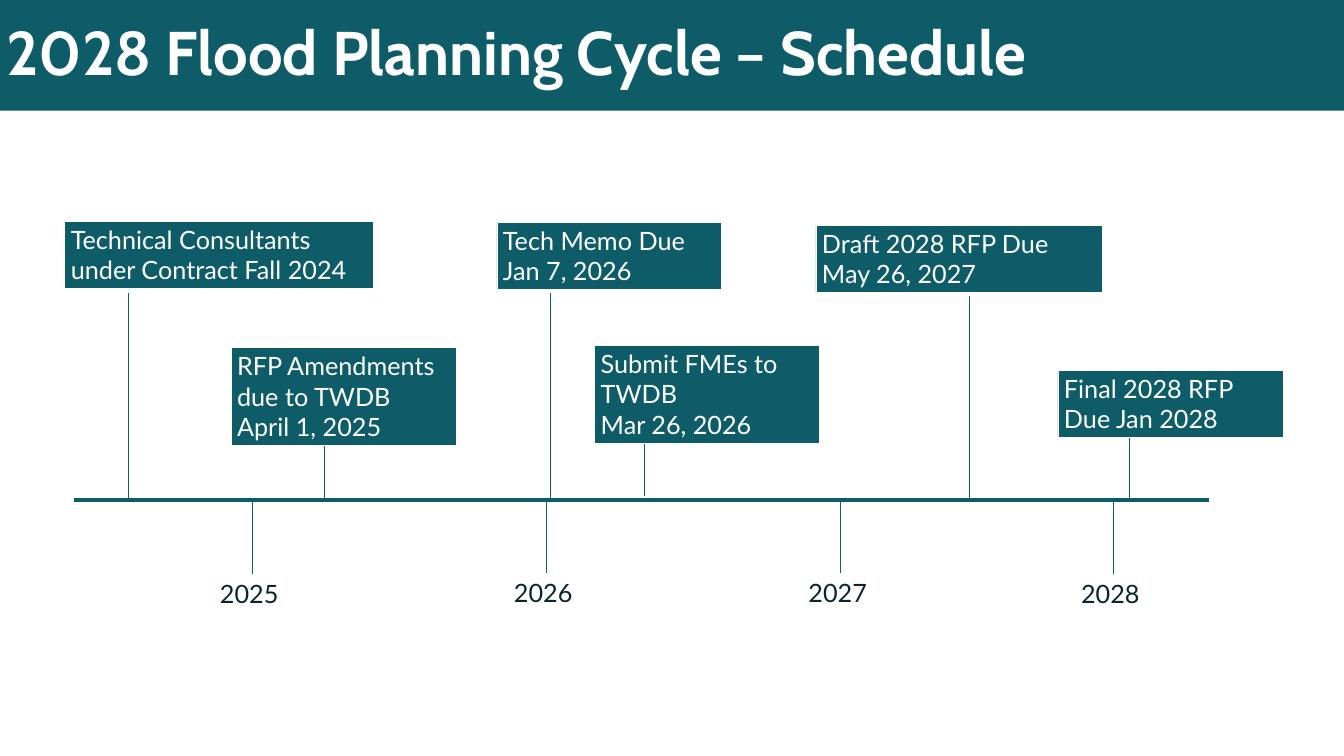
from lxml import etree
from pptx import Presentation
from pptx import util as u
from pptx.dml.color import RGBColor
from pptx.enum import shapes, text
from pptx.oxml import ns

TEAL = RGBColor(0x0E, 0x5C, 0x68)
INK = RGBColor(0x09, 0x26, 0x2C)
WHITE = RGBColor(0xFF, 0xFF, 0xFF)

SLIDE_WIDTH, SLIDE_HEIGHT = 21.99, 12.37
AXIS_Y = 8.18
TICK_LENGTH = 1.2

# Year, tick x, tick top
YEARS = [
    ("2025", 4.12, 8.2),
    ("2026", 8.93, AXIS_Y),
    ("2027", 13.75, AXIS_Y),
    ("2028", 18.21, 8.2),
]

# Paragraphs (a newline is a line break), box (left, top, width, height),
# stem (x, top, bottom)
MILESTONES = [
    (["Technical Consultants under Contract Fall 2024"],
     (1.06, 3.62, 5.05, 1.1), (2.1, 4.8, AXIS_Y)),
    (["RFP Amendments due to TWDB \nApril 1, 2025"],
     (3.78, 5.69, 3.68, 1.6), (5.3, 6.96, 8.16)),
    (["Draft 2028 RFP Due", "May 26, 2027"],
     (13.35, 3.69, 4.68, 1.1), (15.85, 4.85, 8.15)),
    (["Final 2028 RFP Due Jan 2028"],
     (17.31, 6.06, 3.68, 1.1), (18.48, 6.94, 8.15)),
    (["Tech Memo Due Jan 7, 2026"],
     (8.13, 3.64, 3.68, 1.1), (9.01, 4.8, 8.15)),
    (["Submit FMEs to TWDB", "Mar 26, 2026"],
     (9.73, 5.65, 3.68, 1.6), (10.54, 6.98, 8.11)),
]


class TimelineSlide:
    title_font, body_font = "Cabin", "Lato"
    title_size, body_size = 72.6, 29.7

    def __init__(self, presentation):
        self.slide = presentation.slides.add_slide(presentation.slide_layouts[5])

    def add_run(self, paragraph, words, font, size, color, bold=False):
        run = paragraph.add_run()
        run.text = words
        run.font.name = font
        run.font.size = u.Pt(size)
        run.font.bold = bold
        run.font.color.rgb = color

    def title(self, words, height):
        shape = self.slide.shapes.title
        shape.left = shape.top = u.Inches(0)
        shape.width, shape.height = u.Inches(SLIDE_WIDTH), u.Inches(height)
        shape.fill.solid()
        shape.fill.fore_color.rgb = TEAL
        frame = shape.text_frame
        frame.auto_size = text.MSO_AUTO_SIZE.NONE
        frame.vertical_anchor = text.MSO_ANCHOR.MIDDLE
        paragraph = frame.paragraphs[0]
        paragraph.alignment = text.PP_ALIGN.LEFT
        paragraph.line_spacing = 0.9
        self.add_run(paragraph, words, self.title_font, self.title_size, WHITE, True)

    def line(self, start, end, weight=0.5):
        points = [u.Inches(value) for value in (*start, *end)]
        connector = self.slide.shapes.add_connector(
            shapes.MSO_CONNECTOR.STRAIGHT, *points)
        connector.line.color.rgb = TEAL
        connector.line.width = u.Pt(weight)
        etree.SubElement(connector._element.spPr, ns.qn("a:effectLst"))

    def box(self, paragraphs, bounds, fill, color, outline=None):
        shape = self.slide.shapes.add_shape(
            shapes.MSO_SHAPE.RECTANGLE, *[u.Inches(value) for value in bounds])
        shape.shadow.inherit = False
        shape.fill.solid()
        shape.fill.fore_color.rgb = fill
        if outline is None:
            shape.line.fill.background()
        else:
            shape.line.color.rgb = outline
            shape.line.width = u.Pt(0.75)
        frame = shape.text_frame
        frame.word_wrap = True
        frame.auto_size = text.MSO_AUTO_SIZE.SHAPE_TO_FIT_TEXT
        frame.vertical_anchor = text.MSO_ANCHOR.TOP
        for index, words in enumerate(paragraphs):
            paragraph = frame.add_paragraph() if index else frame.paragraphs[0]
            paragraph.alignment = text.PP_ALIGN.LEFT
            for part, piece in enumerate(words.split("\n")):
                if part:
                    paragraph.add_line_break()
                self.add_run(paragraph, piece, self.body_font, self.body_size, color)

    def year(self, label, x, top):
        self.line((x, top), (x, top + TICK_LENGTH))
        self.box([label], (x - 0.62, top + TICK_LENGTH + 0.02, 1.27, 0.6), WHITE, INK)

    def milestone(self, paragraphs, bounds, stem):
        x, top, bottom = stem
        self.line((x, top), (x, bottom))
        self.box(paragraphs, bounds, TEAL, WHITE, outline=WHITE)


def main():
    presentation = Presentation()
    presentation.slide_width = u.Inches(SLIDE_WIDTH)
    presentation.slide_height = u.Inches(SLIDE_HEIGHT)

    timeline = TimelineSlide(presentation)
    timeline.title("2028 Flood Planning Cycle – Schedule", 1.81)
    timeline.line((1.21, AXIS_Y), (19.78, AXIS_Y), weight=4.5)
    for year in YEARS:
        timeline.year(*year)
    for milestone in MILESTONES:
        timeline.milestone(*milestone)

    presentation.save("out.pptx")


if __name__ == "__main__":
    main()
